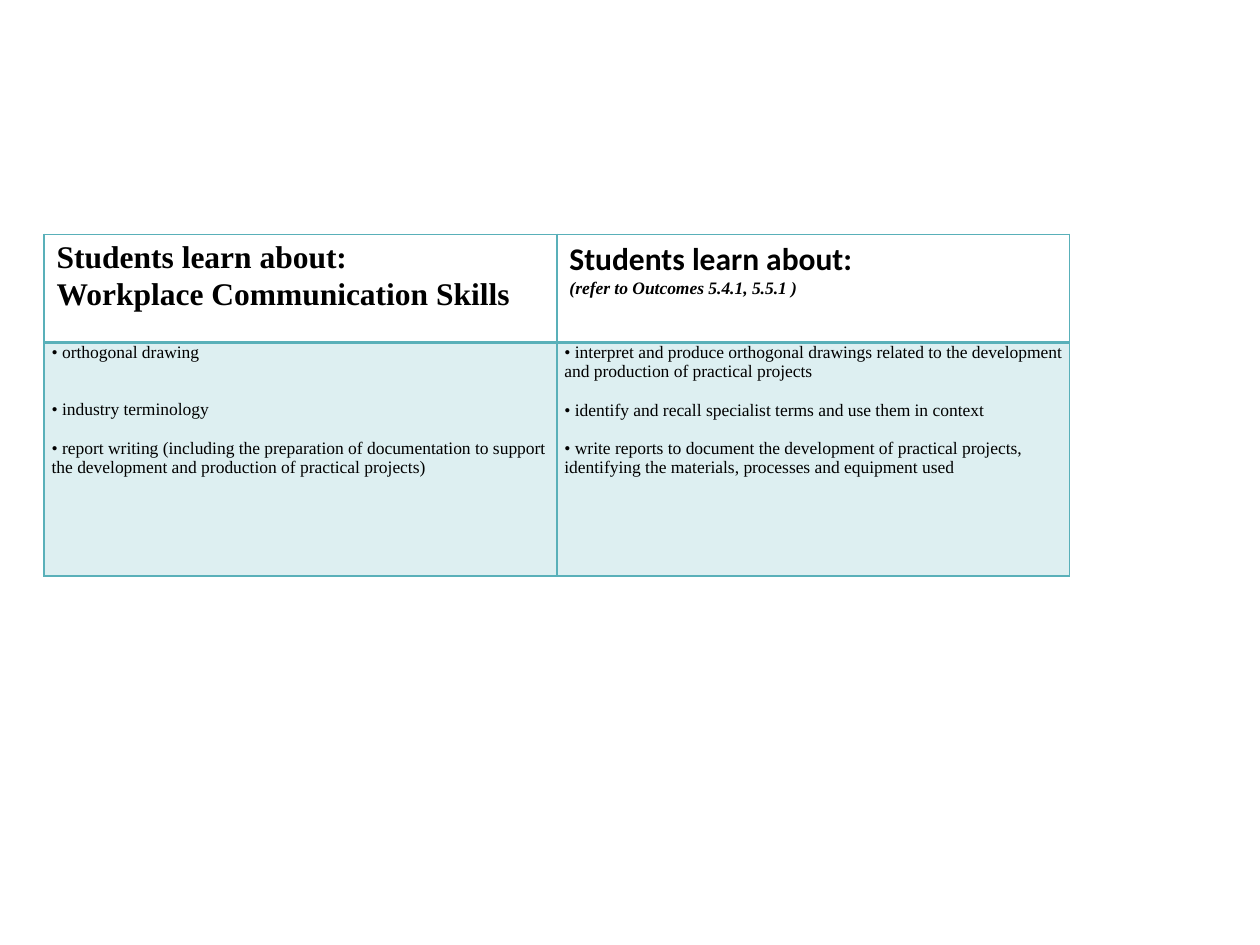
from lxml.etree import SubElement
from pptx import Presentation
from pptx.dml.color import RGBColor
from pptx.oxml.ns import qn
from pptx.util import Inches, Pt

BLANK = 6
SERIF, SANS = "Times New Roman", "Calibri"
COLORS = {"teal": "59B0B9", "ink": "000000"}
ROWS = (0.86, 1.85)
COL = 4.07
HEADS = (
    (("Students learn about:", SERIF, 18, False, 0),
     ("Workplace Communication Skills", SERIF, 18, False, 1)),
    (("Students learn about:", SANS, 18, False, 0),
     ("(refer to Outcomes 5.4.1, 5.5.1 )", SERIF, 10, True, 0)),
)
TOPICS = (
    (("• orthogonal drawing", 0),
     ("• industry terminology", 22),
     ("• report writing (including the preparation of documentation to "
      "support the development and production of practical projects)", 11)),
    (("• interpret and produce orthogonal drawings related to the "
      "development and production of practical projects", 0),
     ("• identify and recall specialist terms and use them in context", 11),
     ("• write reports to document the development of practical projects, "
      "identifying the materials, processes and equipment used", 11)),
)


def add_lines(cell, lines, bold):
    """Write lines of (text, font, size, italic, gap) into a cell."""
    frame = cell.text_frame
    frame.text = "\n".join(line[0] for line in lines)
    for para, (_, name, size, slant, gap) in zip(frame.paragraphs, lines):
        para.space_before = Pt(gap)
        for run in para.runs:
            font = run.font
            font.name, font.size = name, Pt(size)
            font.bold, font.italic = bold, slant
            font.color.rgb = RGBColor.from_string(COLORS["ink"])


def add_border(cell, base):
    """Draw the four teal edges of a cell, with its own base width."""
    props = cell._tc.get_or_add_tcPr()
    for side, width in (("L", 1), ("R", 1), ("T", 1), ("B", base)):
        line = SubElement(props, qn(f"a:ln{side}"), w=str(Pt(width)))
        fill = SubElement(line, qn("a:solidFill"))
        SubElement(fill, qn("a:srgbClr"), val=COLORS["teal"])


def add_tint(cell):
    """Fill a cell with teal at a fifth of its strength."""
    cell.fill.solid()
    cell.fill.fore_color.rgb = RGBColor.from_string(COLORS["teal"])
    color = cell._tc.tcPr.find(f"{qn('a:solidFill')}/{qn('a:srgbClr')}")
    SubElement(color, qn("a:alpha"), val="20000")


def add_head(cell, lines):
    """Fill in one heading cell."""
    add_lines(cell, lines, True)
    add_border(cell, 2)
    cell.fill.background()


def add_topic(cell, items):
    """Fill in one tinted cell of topics."""
    cell.margin_left = cell.margin_right = Inches(0.06)
    cell.margin_top = cell.margin_bottom = 0
    add_lines(cell, [(text, SERIF, 10, False, gap) for text, gap in items],
              False)
    add_border(cell, 1)
    add_tint(cell)


def add_grid(slide):
    """Add the table of headings and topics."""
    count = len(HEADS)
    table = slide.shapes.add_table(
        len(ROWS), count, Inches(0.35), Inches(1.86),
        Inches(COL * count), Inches(sum(ROWS))).table
    table.first_row = table.horz_banding = False
    for row, height in zip(table.rows, ROWS):
        row.height = Inches(height)
    for i, (head, items) in enumerate(zip(HEADS, TOPICS)):
        table.columns[i].width = Inches(COL)
        add_head(table.cell(0, i), head)
        add_topic(table.cell(1, i), items)


def main():
    """Build and save the slide."""
    deck = Presentation()
    deck.slide_width, deck.slide_height = Inches(10), Inches(7.5)
    add_grid(deck.slides.add_slide(deck.slide_layouts[BLANK]))
    deck.save("out.pptx")


if __name__ == "__main__":
    main()
